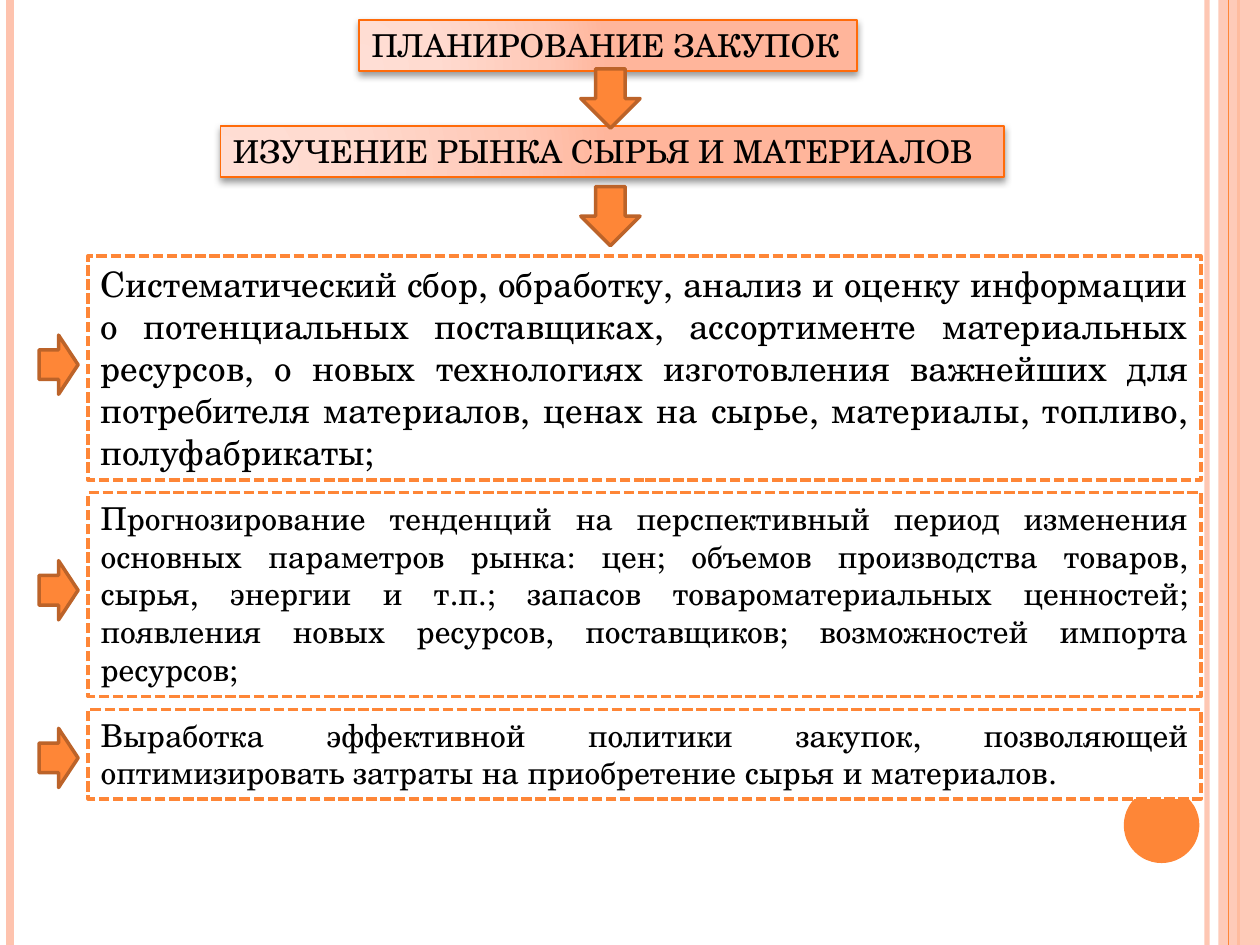
from lxml.etree import SubElement
from pptx import Presentation
from pptx.dml.color import RGBColor
from pptx.enum.dml import MSO_LINE
from pptx.enum.shapes import MSO_CONNECTOR, MSO_SHAPE
from pptx.enum.text import MSO_AUTO_SIZE, PP_ALIGN
from pptx.oxml import parse_xml
from pptx.oxml.ns import nsdecls, qn
from pptx.util import Pt

FONT = "TeX Gyre Schola"
COLORS = {
    "orange": "FE8637",
    "arrow_edge": "BC6329",
    "title_edge": "FF6B0A",
    "peach": "FEC3AE",
    "white": "FFFFFF",
    "black": "000000",
}
TITLE_GRADIENT = {0: "FFDED5", 30: "FFDBD0", 75: "FFC8B6", 100: "FFB59B"}
SLIDE_WIDTH, SLIDE_HEIGHT = 720, 540
BOX_LEFT, BOX_WIDTH = 50.4, 635.8
ARROW_LENGTH = 33.84

STRIPES = [
    (689.8, "peach", 3, 93),
    (5.8, "peach", 4.5, 100),
    (707.8, "orange", 1.5, 100),
]
TITLES = [
    ("ИЗУЧЕНИЕ РЫНКА СЫРЬЯ И МАТЕРИАЛОВ", 126, 72, 447.8),
    ("ПЛАНИРОВАНИЕ ЗАКУПОК", 205.2, 11.5, 284.4),
]
DOWN_ARROW_TOPS = [39.4, 106.6]
TASKS = [
    ("Систематический сбор, обработку, анализ и оценку информации о потенциальных "
     "поставщиках, ассортименте материальных ресурсов, о новых технологиях изготовления "
     "важнейших для потребителя материалов, ценах на сырье, материалы, топливо, "
     "полуфабрикаты;", 146.2, 128.2, 20, 191.5),
    ("Прогнозирование тенденций на перспективный период изменения основных параметров "
     "рынка: цен; объемов производства товаров, сырья, энергии и т.п.; запасов "
     "товароматериальных ценностей; появления новых ресурсов, поставщиков; возможностей "
     "импорта ресурсов;", 281.5, 116.6, 18, 320.4),
    ("Выработка эффективной политики закупок, позволяющей оптимизировать затраты на "
     "приобретение сырья и материалов. ", 405.4, 51.1, 18, 416.2),
]


def color(name):
    return RGBColor.from_string(COLORS[name])


def set_alpha(fill_parent, percent):
    rgb = next(fill_parent.iter(qn("a:srgbClr")))
    SubElement(rgb, qn("a:alpha")).set("val", str(percent * 1000))


def add_stripe(slide, x, color_name, width, alpha=100):
    stripe = slide.shapes.add_connector(
        MSO_CONNECTOR.STRAIGHT, Pt(x), Pt(0), Pt(x), Pt(SLIDE_HEIGHT))
    stripe.line.color.rgb = color(color_name)
    stripe.line.width = Pt(width)
    if alpha < 100:
        set_alpha(stripe.line._get_or_add_ln(), alpha)
    SubElement(stripe._element.spPr, qn("a:effectLst"))


def add_filled_shape(slide, kind, left, top, width, height, fill, edge=None):
    shape = slide.shapes.add_shape(kind, Pt(left), Pt(top), Pt(width), Pt(height))
    shape.shadow.inherit = False
    shape.fill.solid()
    shape.fill.fore_color.rgb = color(fill)
    if edge:
        shape.line.color.rgb = color(edge)
        shape.line.width = Pt(2)
    else:
        shape.line.fill.background()
    return shape


def add_text_box(slide, text, left, top, width, height, size, edge, edge_width):
    box = slide.shapes.add_textbox(Pt(left), Pt(top), Pt(width), Pt(height))
    box.line.color.rgb = color(edge)
    box.line.width = Pt(edge_width)
    box.text_frame.text = text
    box.text_frame.auto_size = MSO_AUTO_SIZE.SHAPE_TO_FIT_TEXT
    font = box.text_frame.paragraphs[0].runs[0].font
    font.name = FONT
    font.size = Pt(size)
    font.color.rgb = color("black")
    return box


def add_title(slide, text, left, top, width):
    box = add_text_box(slide, text, left, top, width, 29.1, 18, "title_edge", 1)
    box.text_frame.word_wrap = False
    stops = "".join(
        f'<a:gs pos="{position * 1000}"><a:srgbClr val="{value}"/></a:gs>'
        for position, value in TITLE_GRADIENT.items())
    gradient = parse_xml(
        f'<a:gradFill {nsdecls("a")} rotWithShape="1"><a:gsLst>{stops}</a:gsLst>'
        '<a:path path="circle">'
        '<a:fillToRect l="5000" t="100000" r="120000" b="10000"/>'
        '</a:path></a:gradFill>')
    properties = box._element.spPr
    properties.replace(properties.find(qn("a:noFill")), gradient)
    properties.append(parse_xml(
        f'<a:effectLst {nsdecls("a")}>'
        f'<a:outerShdw blurRad="{Pt(4)}" dist="{Pt(2)}" dir="5400000" rotWithShape="0">'
        f'<a:srgbClr val="{COLORS["black"]}"><a:alpha val="40000"/></a:srgbClr>'
        '</a:outerShdw></a:effectLst>'))


def add_task(slide, text, top, height, size, arrow_top):
    box = add_text_box(slide, text, BOX_LEFT, top, BOX_WIDTH, height, size, "orange", 2)
    box.fill.solid()
    box.fill.fore_color.rgb = color("white")
    box.line.dash_style = MSO_LINE.SQUARE_DOT
    box.text_frame.word_wrap = True
    box.text_frame.paragraphs[0].alignment = PP_ALIGN.JUSTIFY
    add_filled_shape(slide, MSO_SHAPE.RIGHT_ARROW, 22.3, arrow_top, 22.3, ARROW_LENGTH,
                     "orange", "arrow_edge")


def add_decoration(slide):
    for stripe in STRIPES:
        add_stripe(slide, *stripe)
    band = add_filled_shape(slide, MSO_SHAPE.RECTANGLE, 696.2, 0, 23.8, SLIDE_HEIGHT, "peach")
    set_alpha(band._element.spPr, 87)
    add_stripe(slide, 702, "orange", 0.75)
    add_filled_shape(slide, MSO_SHAPE.OVAL, 642.2, 450, 43.2, 43.2, "orange")


def main():
    presentation = Presentation()
    presentation.slide_width = Pt(SLIDE_WIDTH)
    presentation.slide_height = Pt(SLIDE_HEIGHT)
    slide = presentation.slides.add_slide(presentation.slide_layouts[6])
    add_decoration(slide)
    for title in TITLES:
        add_title(slide, *title)
    for top in DOWN_ARROW_TOPS:
        add_filled_shape(slide, MSO_SHAPE.DOWN_ARROW, 331.9, top, ARROW_LENGTH, ARROW_LENGTH,
                         "orange", "arrow_edge")
    for task in TASKS:
        add_task(slide, *task)
    presentation.save("out.pptx")


if __name__ == "__main__":
    main()
